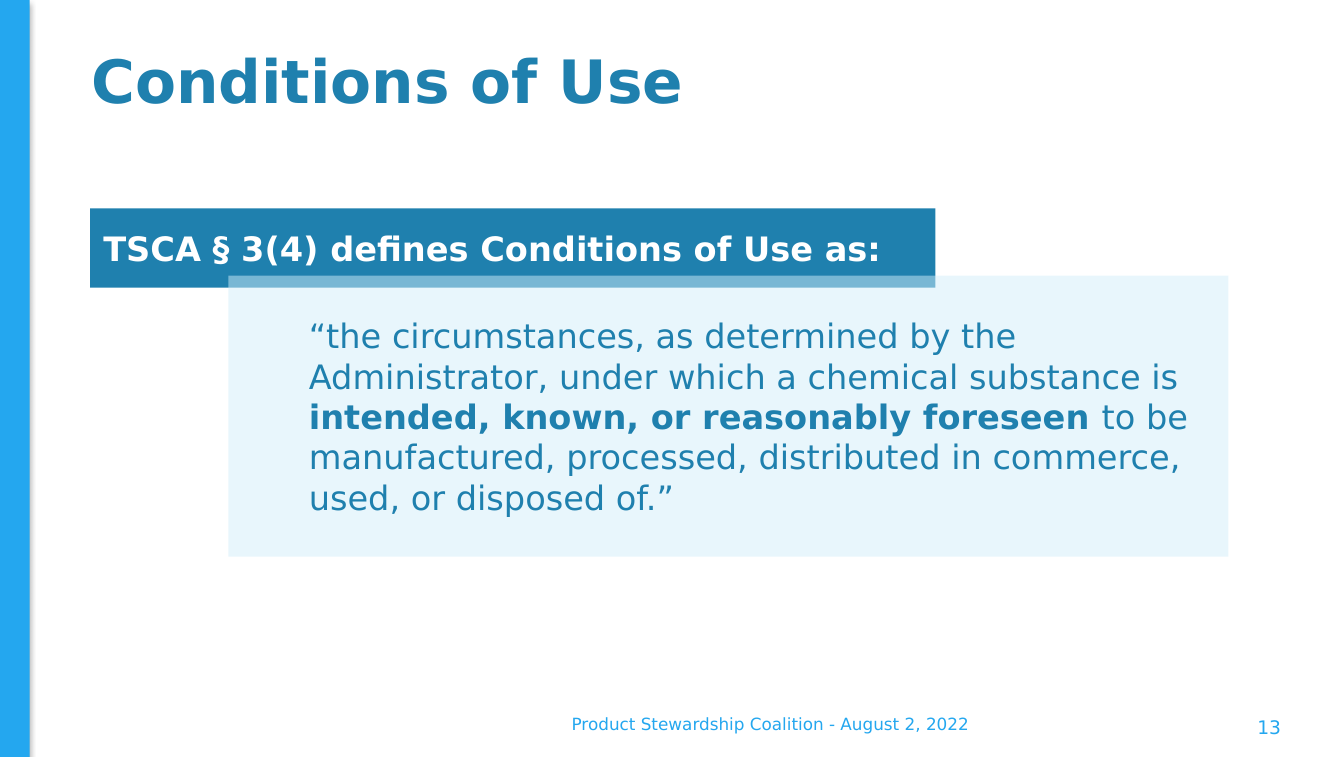
import lxml.etree
import pptx
import pptx.dml.color
import pptx.enum.shapes
import pptx.enum.text
import pptx.oxml
import pptx.oxml.ns
import pptx.util

FONT = "DejaVu Sans"
BLUE, SKY, PALE, WHITE = "1F80AE", "24A7EF", "D2EEFB", "FFFFFF"
ALIGN = pptx.enum.text.PP_ALIGN
RECTANGLE = pptx.enum.shapes.MSO_SHAPE.RECTANGLE

deck = pptx.Presentation()
deck.slide_width = pptx.util.Inches(10)
deck.slide_height = pptx.util.Inches(5.63)
slide = deck.slides.add_slide(deck.slide_layouts[5])


def area(left, top, width, height):
    """Turn percentages of the slide's size into lengths."""
    across, down = deck.slide_width / 100, deck.slide_height / 100
    return [round(n) for n in (left * across, top * down, width * across, height * down)]


def write(holder, runs, size, colour, align=ALIGN.LEFT):
    """Fill a shape with one middle-anchored paragraph of (text, bold) runs."""
    frame = holder.text_frame
    frame.word_wrap = True
    frame.auto_size = pptx.enum.text.MSO_AUTO_SIZE.NONE
    frame.vertical_anchor = pptx.enum.text.MSO_ANCHOR.MIDDLE
    paragraph = frame.paragraphs[0]
    paragraph.alignment = align
    for text, bold in runs:
        run = paragraph.add_run()
        run.text = text
        run.font.name = FONT
        run.font.size = pptx.util.Pt(size)
        run.font.bold = bold
        run.font.color.rgb = pptx.dml.color.RGBColor.from_string(colour)
    return paragraph


# Filled rectangles: sidebar, heading band, quote panel
panels = []
for place, colour in [
    ((0, 0, 2.2, 100), SKY),
    ((6.7, 27.53, 62.9, 10.48), BLUE),
    ((17, 36.41, 74.4, 37.12), PALE),
]:
    panel = slide.shapes.add_shape(RECTANGLE, *area(*place))
    panel.shadow.inherit = False
    panel.fill.solid()
    panel.fill.fore_color.rgb = pptx.dml.color.RGBColor.from_string(colour)
    panel.line.fill.background()
    panels.append(panel)
sidebar, heading, quote = panels

# Soft shadow on the sidebar, half-transparent quote panel
effects = sidebar._element.spPr.find(pptx.oxml.ns.qn("a:effectLst"))
effects.append(pptx.oxml.parse_xml(
    f'<a:outerShdw {pptx.oxml.ns.nsdecls("a")} blurRad="{pptx.util.Pt(3.1)}" '
    f'dist="{pptx.util.Pt(1.8)}" dir="5400000" rotWithShape="0">'
    '<a:srgbClr val="000000"><a:alpha val="35000"/></a:srgbClr></a:outerShdw>'))
quote_colour = quote._element.spPr.find(".//" + pptx.oxml.ns.qn("a:srgbClr"))
lxml.etree.SubElement(quote_colour, pptx.oxml.ns.qn("a:alpha")).set("val", "50000")

title = slide.shapes.title
title.left, title.top, title.width, title.height = area(5.8, 3.55, 89.6, 15.1)
write(title, [("Conditions of Use", True)], 32, BLUE).line_spacing = 0.9

write(heading, [("TSCA § 3(4) defines Conditions of Use as:", True)], 18, WHITE)

definition = write(quote, [
    ("“the circumstances, as determined by the Administrator, under which a chemical substance is ", False),
    ("intended, known, or reasonably foreseen ", True),
    ("to be manufactured, processed, distributed in commerce, used, or disposed of.”", False),
], 18, BLUE)
definition.level = 1
indent = definition._p.get_or_add_pPr()
indent.set("marL", str(pptx.util.Inches(0.5)))
indent.set("indent", "0")

event = slide.shapes.add_textbox(*area(23.2, 92.9, 68.2, 5.33))
write(event, [("Product Stewardship Coalition - August 2, 2022", False)], 9, SKY, ALIGN.CENTER)

page_number = slide.shapes.add_textbox(*area(86.2, 94.32, 10.1, 3.55))
write(page_number, [("13", False)], 10, SKY, ALIGN.RIGHT)

deck.save("out.pptx")
